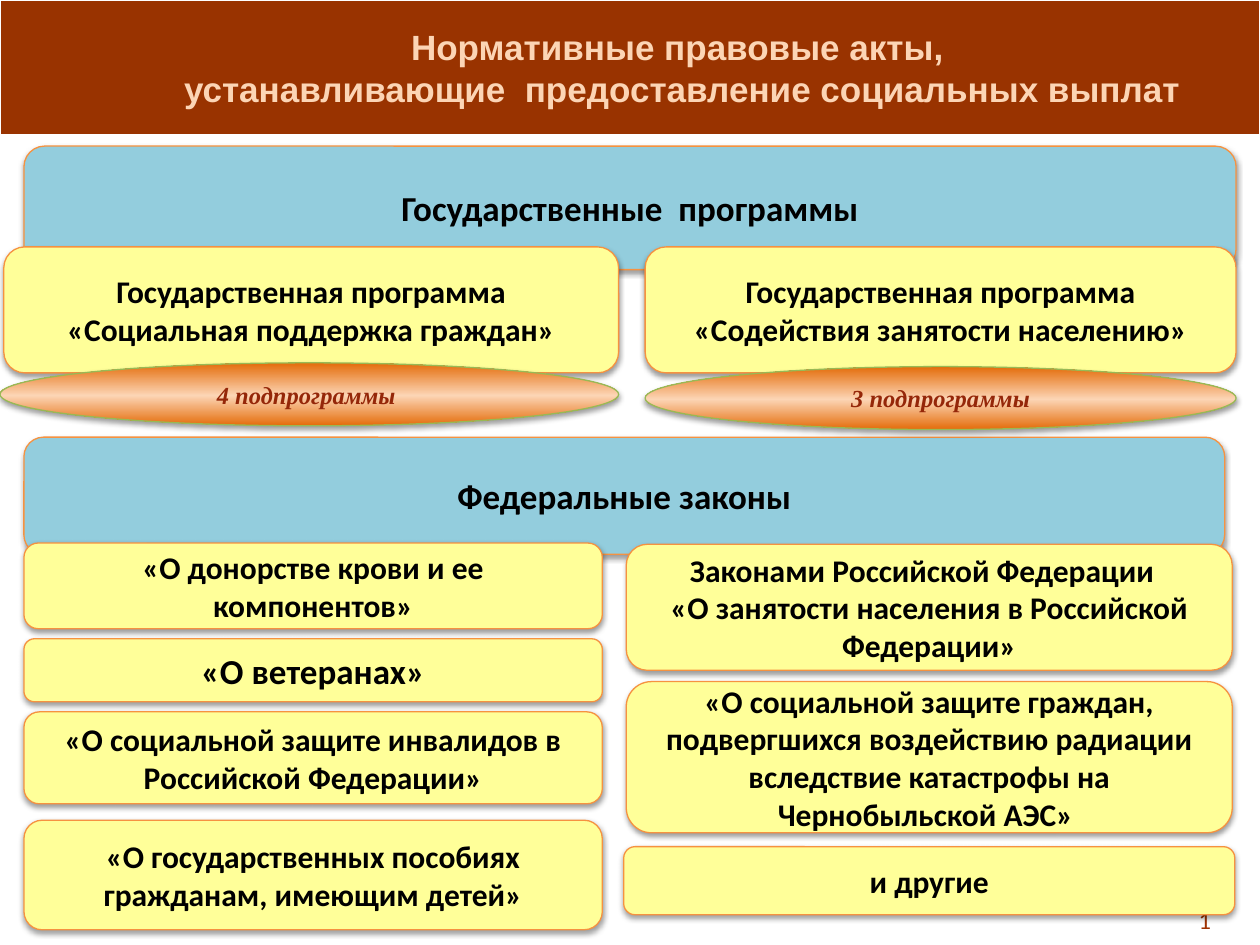
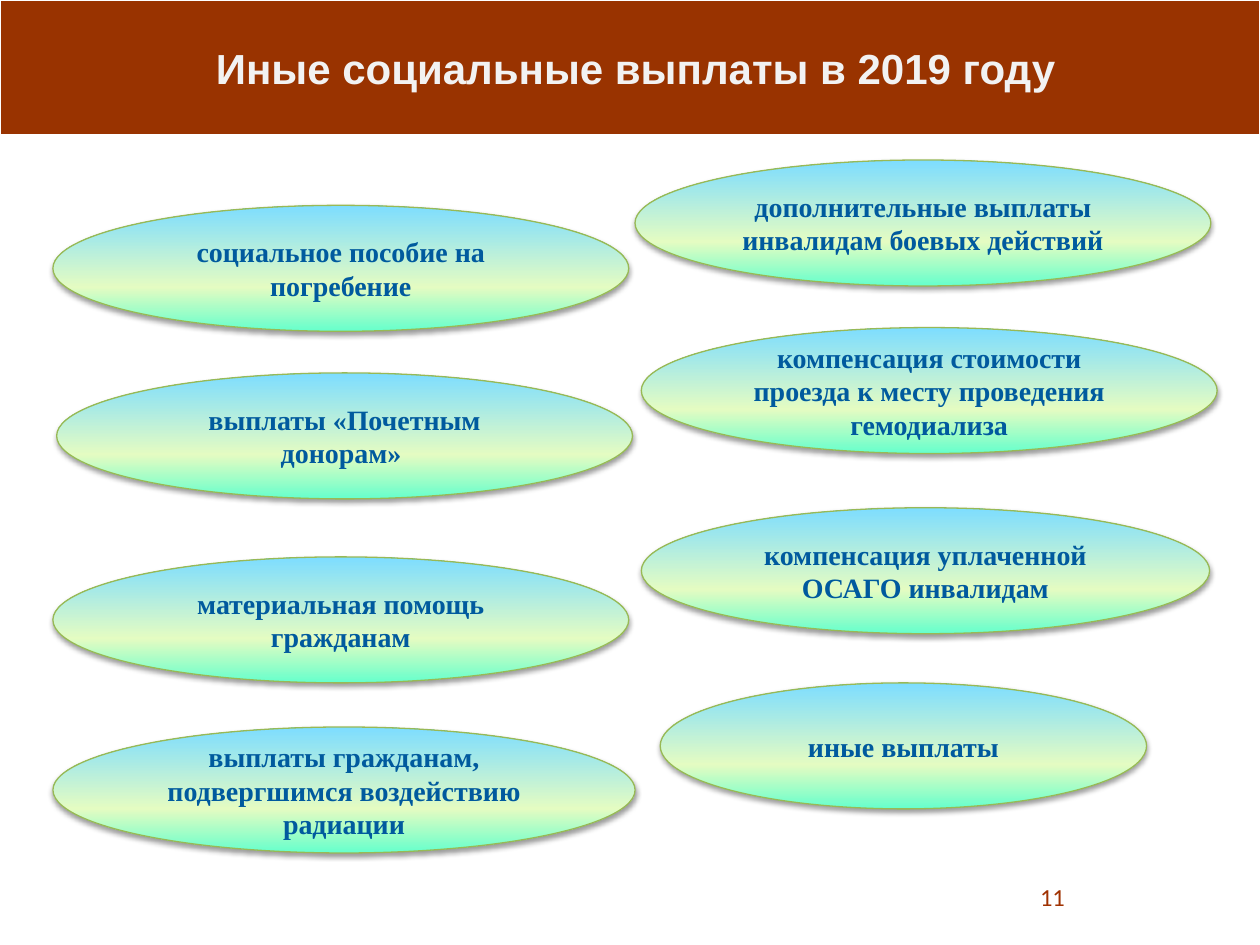
from copy import deepcopy

from lxml.etree import SubElement
from pptx import Presentation
from pptx.dml.color import RGBColor
from pptx.enum.shapes import MSO_SHAPE
from pptx.enum.text import MSO_ANCHOR, MSO_AUTO_SIZE, PP_ALIGN
from pptx.oxml.ns import qn
from pptx.util import Inches, Pt

COLORS = {
    "band": "993300", "white": "FFFFFF", "peach": "FCD5B5", "light": "F2F2F2",
    "number": "A03202", "heading": "93CDDD", "law": "FFFF99", "box_line": "F69240",
    "oval_line": "98B955", "black": "000000", "orange": "E46C0A", "rust": "952709",
    "mint": "66FFCC", "lime": "E4FCC2", "sky": "7DDDFF", "blue": "005A9E",
}
ORANGE_GRADIENT = [(0, "orange"), (0.48, "peach"), (1, "orange")]
SKY_GRADIENT = [(0, "mint"), (0.35, "lime"), (1, "sky")]


def rgb(name):
    return RGBColor.from_string(COLORS[name])


class Deck:
    def __init__(self):
        self.prs = Presentation()
        self.prs.slide_width, self.prs.slide_height = Inches(10), Inches(7.5)
        self.layout = self.prs.slide_layouts[5]
        self.slide = None

    def start_slide(self, title, width, color, size):
        first = self.slide is None
        self.slide = self.prs.slides.add_slide(self.layout)
        if first:
            self.share_band()
        heading = self.slide.shapes.title
        heading.left, heading.top = Inches(0.83), Inches(0)
        heading.width, heading.height = Inches(width), Inches(1.07)
        heading.text_frame.auto_size = MSO_AUTO_SIZE.NONE
        self.set_text(heading, title, "Arial", size, color, bold=True)

    def share_band(self):
        band = self.shape(MSO_SHAPE.RECTANGLE, (0, 0, 10, 1.07), "white")
        band.fill.solid()
        band.fill.fore_color.rgb = rgb("band")
        self.layout.shapes._spTree.insert(2, band._element)

    def set_text(self, shape, text, font, size, color, bold=False, italic=False,
                 align=PP_ALIGN.CENTER):
        frame = shape.text_frame
        frame.word_wrap = True
        frame.vertical_anchor = MSO_ANCHOR.MIDDLE
        frame.text = text
        for paragraph in frame.paragraphs:
            paragraph.alignment = align
            for run in paragraph.runs:
                run.font.name, run.font.size = font, Pt(size)
                run.font.bold, run.font.italic = bold, italic
                run.font.color.rgb = rgb(color)

    def shape(self, preset, place, line):
        shape = self.slide.shapes.add_shape(preset, *map(Inches, place))
        shape.line.color.rgb = rgb(line)
        shape.line.width = Pt(0.75)
        shape.shadow.inherit = False
        return shape

    def add_shadow(self, shape):
        effects = shape._element.spPr.find(qn("a:effectLst"))
        shadow = SubElement(effects, qn("a:outerShdw"), blurRad="40000", dist="20000",
                            dir="5400000", rotWithShape="0")
        color = SubElement(shadow, qn("a:srgbClr"), val=COLORS["black"])
        SubElement(color, qn("a:alpha"), val="38000")

    def box(self, place, text, fill="law", size=18):
        box = self.shape(MSO_SHAPE.ROUNDED_RECTANGLE, place, "box_line")
        box.fill.solid()
        box.fill.fore_color.rgb = rgb(fill)
        self.add_shadow(box)
        self.set_text(box, text, "Calibri", size, "black", bold=True)

    def oval(self, place, text, gradient, color, size, italic=False):
        oval = self.shape(MSO_SHAPE.OVAL, place, "oval_line")
        oval.fill.gradient()
        oval.fill.gradient_angle = 90
        stop_list = oval._element.spPr.find(qn("a:gradFill")).find(qn("a:gsLst"))
        stop_list.append(deepcopy(stop_list[-1]))
        for stop, (position, name) in zip(oval.fill.gradient_stops, gradient):
            stop.position = position
            stop.color.rgb = rgb(name)
        self.add_shadow(oval)
        self.set_text(oval, text, "Times New Roman", size, color, bold=True, italic=italic)

    def page_number(self, place, number):
        box = self.slide.shapes.add_textbox(*map(Inches, place))
        self.set_text(box, number, "Calibri", 14, "number", align=PP_ALIGN.RIGHT)


def build_legal_acts(deck):
    deck.start_slide("Нормативные правовые акты, \vустанавливающие  предоставление социальных выплат",
                     9.17, "peach", 20)
    deck.page_number((9.38, 7.1, 0.33, 0.4), "1")
    deck.box((0.19, 3.47, 9.53, 0.93), "Федеральные законы", "heading", 20)
    deck.box((0.19, 1.16, 9.62, 0.98), "Государственные  программы", "heading", 20)

    deck.box((0.19, 5.07, 4.59, 0.5), "«О ветеранах»", size=20)
    left_laws = [
        (4.31, 0.68, "«О донорстве крови и ее компонентов»"),
        (5.65, 0.73, "«О социальной защите инвалидов в Российской Федерации»"),
        (6.51, 0.87, "«О государственных пособиях гражданам, имеющим детей»"),
    ]
    for top, height, law in left_laws:
        deck.box((0.19, top, 4.59, height), law)
    right_laws = [
        (4.32, 1, "Законами Российской Федерации  \v«О занятости населения в Российской Федерации»"),
        (5.41, 1.2, "«О социальной защите граждан, подвергшихся воздействию радиации "
                    "вследствие катастрофы на Чернобыльской АЭС» "),
    ]
    for top, height, law in right_laws:
        deck.box((4.97, top, 4.81, height), law)
    deck.box((4.95, 6.72, 4.85, 0.54), "и другие")

    deck.box((0.03, 1.96, 4.88, 1), "Государственная программа «Социальная поддержка граждан»")
    deck.box((5.12, 1.96, 4.69, 1), "Государственная программа\n«Содействия занятости населению»")
    subprograms = [
        ((5.12, 2.91, 4.69, 0.5), "3 подпрограммы"),
        ((0, 2.88, 4.91, 0.5), "4 подпрограммы "),
    ]
    for place, count in subprograms:
        deck.oval(place, count, ORANGE_GRADIENT, "rust", 14, italic=True)


def build_other_payments(deck):
    deck.start_slide("Иные социальные выплаты в 2019 году", 8.43, "light", 24)
    deck.page_number((7.4, 6.92, 1.15, 0.4), "11")
    payments = [
        (0.42, 1.63, 4.57, "социальное пособие на погребение"),
        (0.45, 2.96, 4.57, "выплаты «Почетным донорам» "),
        (0.42, 4.42, 4.57, "материальная помощь гражданам"),
        (5.09, 2.6, 4.57, "компенсация стоимости проезда к месту проведения гемодиализа"),
        (5.04, 1.27, 4.57, "дополнительные выплаты инвалидам боевых действий"),
        (5.09, 4.03, 4.51, "компенсация уплаченной ОСАГО инвалидам"),
        (0.42, 5.77, 4.62, "выплаты гражданам, подвергшимся воздействию радиации"),
        (5.24, 5.42, 3.86, "иные выплаты"),
    ]
    for left, top, width, payment in payments:
        deck.oval((left, top, width, 1), payment, SKY_GRADIENT, "blue", 16)


def main():
    deck = Deck()
    build_legal_acts(deck)
    build_other_payments(deck)
    deck.prs.save("out.pptx")


if __name__ == "__main__":
    main()
